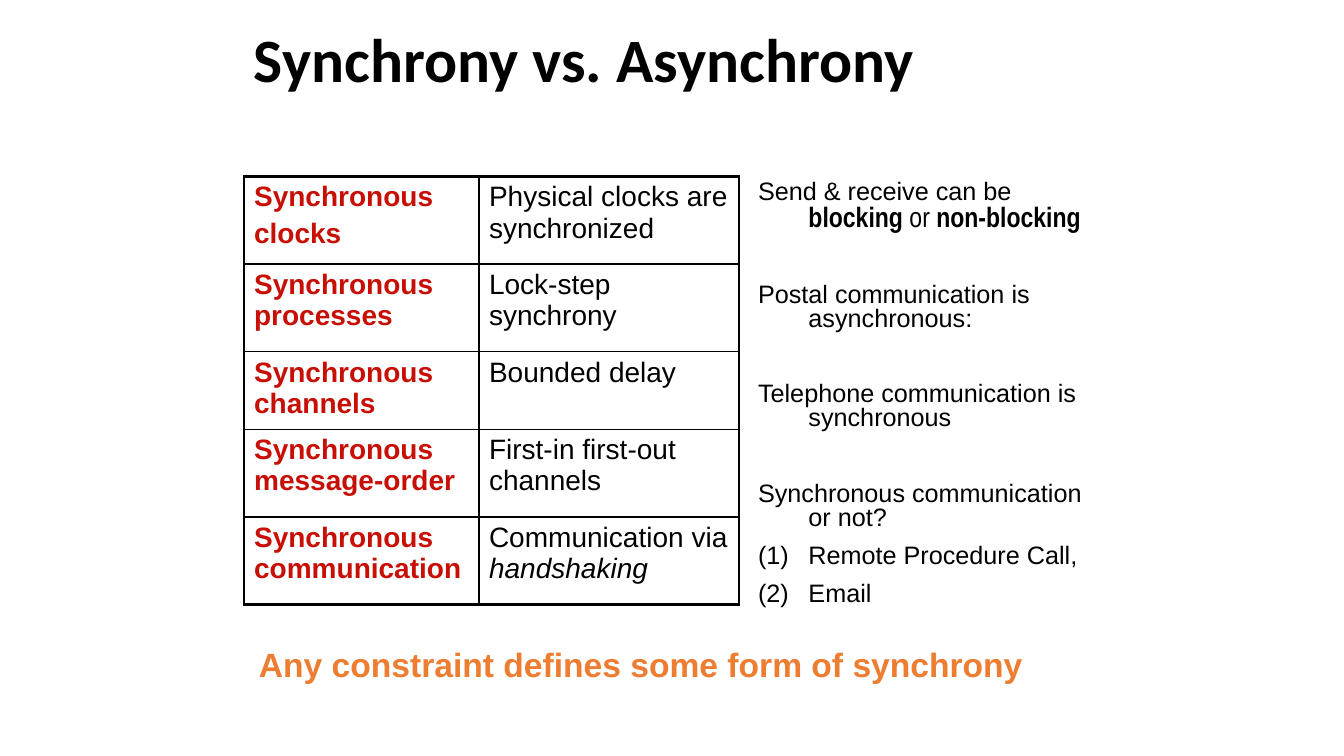
from dataclasses import dataclass

from lxml.etree import SubElement
from pptx import Presentation
from pptx.dml.color import RGBColor
from pptx.enum.text import MSO_ANCHOR
from pptx.oxml.ns import qn
from pptx.util import Inches, Pt

COLORS = {"text": "000000", "term": "C70F05", "accent": "ED7D31", "border": "000000"}
OUTER_BORDER, INNER_BORDER = 2.25, 1
NOTE_SPACING, NOTE_GAP = 10, 36.6


@dataclass(frozen=True)
class Span:
    text: str
    size: float
    font: str = "Arial"
    color: str = "text"
    bold: bool = False
    italic: bool = False


@dataclass(frozen=True)
class Note:
    spans: list[Span]
    space_before: float = NOTE_GAP
    numbered: bool = False


@dataclass(frozen=True)
class Row:
    term: list[str]
    meaning: list[Span]
    height: float = 0.87


def narrow(text: str, bold: bool = True) -> Span:
    return Span(text, 20, "Arial Narrow", bold=bold)


def plain(text: str) -> list[Span]:
    return [Span(text, 18)]


def meaning(text: str, italic: bool = False) -> Span:
    return Span(text, 20, italic=italic)


NOTES = [
    Note([Span("Send & receive can be ", 18), narrow("blocking"),
          narrow(" or ", bold=False), narrow("non-blocking")], NOTE_SPACING),
    Note(plain("Postal communication is asynchronous:")),
    Note(plain("Telephone communication is synchronous")),
    Note(plain("Synchronous communication or not?")),
    Note(plain("Remote Procedure Call,"), NOTE_SPACING, numbered=True),
    Note(plain("Email"), NOTE_SPACING, numbered=True),
]

ROWS = [
    Row(["Synchronous", "clocks"], [meaning("Physical clocks are synchronized")]),
    Row(["Synchronous processes"], [meaning("Lock-step synchrony")]),
    Row(["Synchronous channels"], [meaning("Bounded delay")], 0.77),
    Row(["Synchronous message-order"], [meaning("First-in first-out channels")]),
    Row(["Synchronous communication"],
        [meaning("Communication via "), meaning("handshaking", italic=True)]),
]
COLUMN_WIDTHS = [2.33, 2.58]


def write_spans(para, spans: list[Span]) -> None:
    for span in spans:
        run = para.add_run()
        run.text = span.text
        font = run.font
        font.name, font.size = span.font, Pt(span.size)
        font.bold, font.italic = span.bold, span.italic
        font.color.rgb = RGBColor.from_string(COLORS[span.color])


def add_text(page, left: float, top: float, width: float, height: float, wrap: bool = True):
    box = page.shapes.add_textbox(Inches(left), Inches(top), Inches(width), Inches(height))
    box.text_frame.word_wrap = wrap
    return box.text_frame


def next_paragraph(frame, index: int):
    return frame.add_paragraph() if index else frame.paragraphs[0]


def add_notes(page) -> None:
    frame = add_text(page, 7.42, 1.75, 3.42, 4.5)
    for index, note in enumerate(NOTES):
        para = next_paragraph(frame, index)
        para.line_spacing = 0.8
        para.space_before = Pt(note.space_before)
        write_spans(para, note.spans)
        properties = para._p.get_or_add_pPr()
        properties.set("marL", str(Inches(0.5)))
        properties.set("indent", str(Inches(-0.5)))
        if note.numbered:
            SubElement(properties, qn("a:buFont"), typeface="+mj-lt")
            SubElement(properties, qn("a:buAutoNum"), type="arabicParenBoth")


def set_borders(cell, outer_sides: dict[str, bool]) -> None:
    """Draw all four cell sides, thicker where a side is on the table's edge."""
    properties = cell._tc.get_or_add_tcPr()
    for side, is_outer in outer_sides.items():
        width = Pt(OUTER_BORDER if is_outer else INNER_BORDER)
        line = SubElement(properties, qn(f"a:ln{side}"), w=str(width))
        fill = SubElement(line, qn("a:solidFill"))
        SubElement(fill, qn("a:srgbClr"), val=COLORS["border"])


def add_synchrony_table(page) -> None:
    frame = page.shapes.add_table(
        len(ROWS), len(COLUMN_WIDTHS), Inches(2.42), Inches(1.75),
        Inches(sum(COLUMN_WIDTHS)), Inches(sum(row.height for row in ROWS)))
    table = frame.table
    table.first_row = table.horz_banding = False
    for column, width in zip(table.columns, COLUMN_WIDTHS):
        column.width = Inches(width)
    for row_index, row in enumerate(ROWS):
        table.rows[row_index].height = Inches(row.height)
        term = [[Span(line, 20, color="term", bold=True)] for line in row.term]
        for column_index, paragraphs in enumerate([term, [row.meaning]]):
            cell = table.cell(row_index, column_index)
            for index, spans in enumerate(paragraphs):
                para = next_paragraph(cell.text_frame, index)
                para.space_before = Pt(4 if index else 0)
                write_spans(para, spans)
            set_borders(cell, {
                "L": column_index == 0,
                "R": column_index == len(COLUMN_WIDTHS) - 1,
                "T": row_index == 0,
                "B": row_index == len(ROWS) - 1,
            })
            cell.fill.background()


def main() -> None:
    deck = Presentation()
    deck.slide_width, deck.slide_height = Inches(13.33), Inches(7.5)
    page = deck.slides.add_slide(deck.slide_layouts[6])

    title = add_text(page, 2.42, 0, 8.5, 1.25)
    title.vertical_anchor = MSO_ANCHOR.MIDDLE
    title.paragraphs[0].line_spacing = 0.9
    write_spans(title.paragraphs[0], [Span("Synchrony vs. Asynchrony", 44, "Calibri", bold=True)])

    add_notes(page)
    add_synchrony_table(page)

    conclusion = add_text(page, 2.47, 6.34, 7.86, 0.51, wrap=False)
    write_spans(conclusion.paragraphs[0], [
        Span("Any constraint defines some form of synchrony", 24, color="accent", bold=True)])

    deck.save("out.pptx")


if __name__ == "__main__":
    main()
